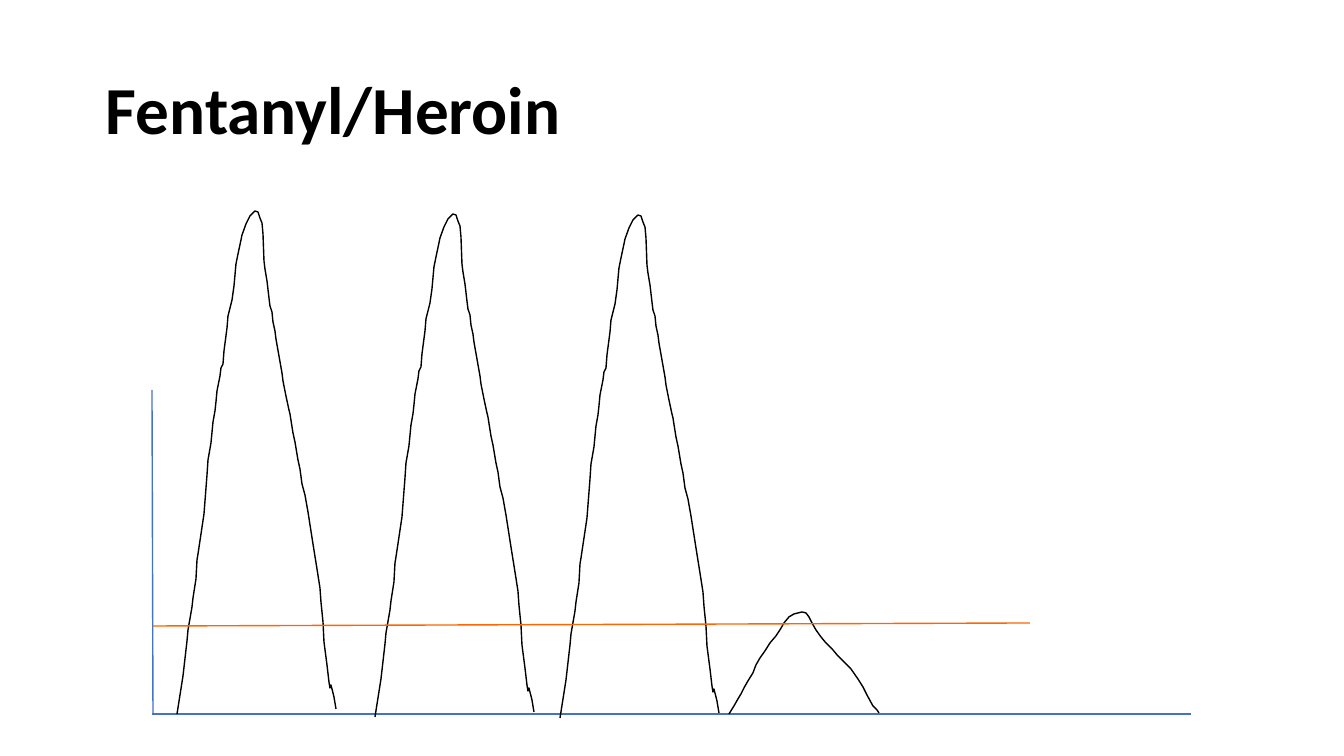
import pptx
import pptx.util
import pptx.dml.color
import pptx.enum.shapes
import pptx.enum.text
import lxml.etree

SCALE = 914400 / 100.8
BLACK = pptx.dml.color.RGBColor(0, 0, 0)
BLUE = pptx.dml.color.RGBColor(0x44, 0x72, 0xC4)
ORANGE = pptx.dml.color.RGBColor(0xFF, 0x66, 0x00)

HIGH = [
    (177, 714), (183, 676), (187, 641), (188, 630), (192, 607), (193, 598),
    (196, 579), (197, 560), (198, 554), (204, 514), (207, 475), (208, 460),
    (211, 443), (213, 422), (215, 411), (216, 402), (217, 391), (220, 376),
    (221, 368), (223, 364), (224, 351), (227, 328), (228, 316), (232, 300),
    (234, 286), (236, 264), (238, 254), (241, 240), (242, 235), (246, 224),
    (250, 216), (255, 211), (258, 212), (260, 218), (262, 223), (263, 234),
    (264, 261), (265, 269), (267, 281), (269, 298), (270, 306), (272, 312),
    (273, 322), (275, 331), (276, 339), (279, 356), (282, 373), (283, 381),
    (286, 396), (289, 410), (290, 414), (293, 433), (295, 442), (298, 460),
    (300, 469), (302, 484), (305, 495), (308, 512), (313, 544), (317, 569),
    (320, 588), (321, 602), (323, 622), (324, 642), (327, 665), (329, 682),
    (330, 688), (331, 685), (334, 697), (336, 709),
]
LOW = [
    (729, 714), (734, 706), (738, 699), (741, 694), (744, 688), (748, 681),
    (753, 673), (756, 665), (760, 658), (765, 651), (770, 643), (776, 636),
    (780, 630), (784, 623), (789, 617), (794, 614), (802, 612), (806, 613),
    (809, 617), (812, 623), (816, 630), (821, 637), (826, 643), (833, 650),
    (838, 656), (844, 662), (851, 669), (858, 679), (863, 687), (867, 695),
    (873, 706), (877, 710), (879, 713),
]
SHIFTS = [(0, 0), (198, 3), (383, 4)]


def px(size):
    return pptx.util.Emu(round(size * SCALE))


def add_title(slide, text, left, top, width, height):
    title = slide.shapes.title
    title.left, title.top = px(left), px(top)
    title.width, title.height = px(width), px(height)
    frame = title.text_frame
    frame.auto_size = pptx.enum.text.MSO_AUTO_SIZE.NONE
    frame.vertical_anchor = pptx.enum.text.MSO_ANCHOR.MIDDLE
    frame.margin_left = frame.margin_right = px(13)
    frame.margin_top = frame.margin_bottom = px(7)
    para = frame.paragraphs[0]
    para.alignment = pptx.enum.text.PP_ALIGN.LEFT
    para.line_spacing = 0.9
    run = para.add_run()
    run.text = text
    run.font.name = "Calibri"
    run.font.size = pptx.util.Pt(48)
    run.font.bold = True
    run.font.color.rgb = BLACK


def add_line(slide, start, end, color):
    line = slide.shapes.add_connector(
        pptx.enum.shapes.MSO_CONNECTOR.STRAIGHT,
        px(start[0]), px(start[1]), px(end[0]), px(end[1]))
    line.line.color.rgb = color
    line.line.width = pptx.util.Pt(1)
    lxml.etree.SubElement(
        line._element.spPr, pptx.oxml.ns.qn("a:effectLst"))


def add_curve(slide, points, shift=(0, 0)):
    right, down = shift
    moved = [(x + right, y + down) for x, y in points]
    pen = slide.shapes.build_freeform(*moved[0], scale=SCALE)
    pen.add_line_segments(moved[1:], close=False)
    curve = pen.convert_to_shape()
    curve.shadow.inherit = False
    curve.fill.background()
    curve.line.color.rgb = BLACK
    curve.line.width = pptx.util.Pt(1)


def main():
    deck = pptx.Presentation()
    deck.slide_width, deck.slide_height = px(1344), px(756)
    slide = deck.slides.add_slide(deck.slide_layouts[5])
    add_title(slide, "Fentanyl/Heroin", 93, 40, 1159, 146)
    add_line(slide, (152, 390), (153, 714), BLUE)
    add_line(slide, (152, 714), (1191, 714), BLUE)
    add_curve(slide, LOW)
    for shift in SHIFTS:
        add_curve(slide, HIGH, shift)
    add_line(slide, (153, 626), (1030, 623), ORANGE)
    deck.save("out.pptx")


if __name__ == "__main__":
    main()
